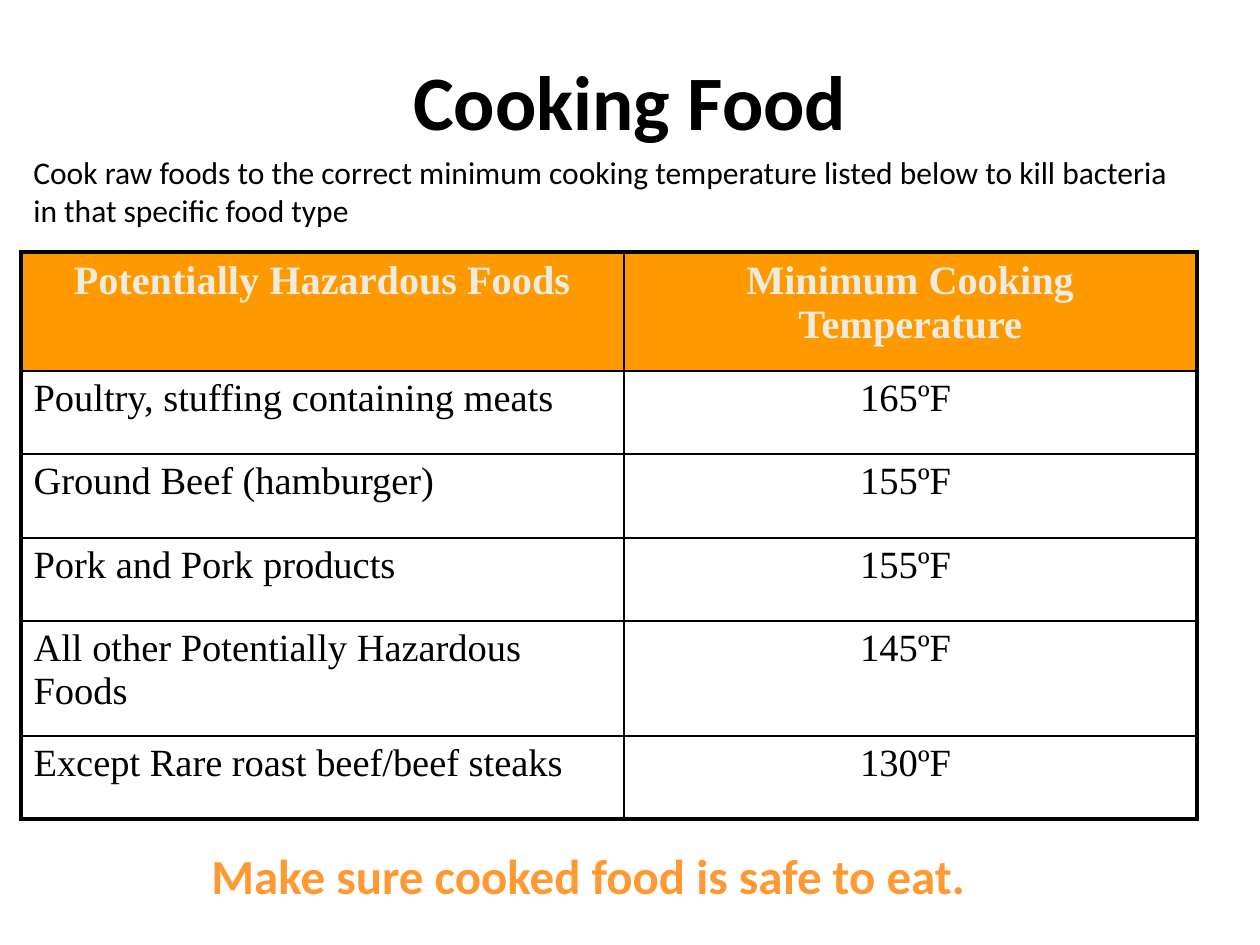
from lxml.etree import SubElement
from pptx import Presentation
from pptx.dml.color import RGBColor
from pptx.enum.text import MSO_ANCHOR, MSO_AUTO_SIZE, PP_ALIGN
from pptx.oxml.ns import qn
from pptx.util import Pt

EMU_PER_PX = 914400 / 126


def px(*lengths):
    return [round(length * EMU_PER_PX) for length in lengths]


def write(frame, wording, color, align, font_format):
    frame.word_wrap = True
    paragraph = frame.paragraphs[0]
    paragraph.alignment = align
    run = paragraph.add_run()
    run.text = wording
    run.font.color.rgb = RGBColor.from_string(color)
    for attribute, value in font_format.items():
        setattr(run.font, attribute, value)


deck = Presentation()
deck.slide_width, deck.slide_height = px(1260, 945)
slide = deck.slides.add_slide(deck.slide_layouts[5])

heading = slide.shapes.title
heading.left, heading.top, heading.width, heading.height = px(63, 21, 1134, 158)
heading.text_frame.vertical_anchor = MSO_ANCHOR.MIDDLE
write(heading.text_frame, "Cooking Food", "000000", PP_ALIGN.CENTER,
      {"name": "Calibri", "size": Pt(44), "bold": True})

captions = [
    ("Cook raw foods to the correct minimum cooking temperature listed below "
     "to kill bacteria in that specific food type",
     (21, 147, 1176, 89), "000000", {"name": "Calibri", "size": Pt(18), "bold": False}),
    ("Make sure cooked food is safe to eat.",
     (199, 839, 903, 72), "FF9933", {"name": "Calibri", "size": Pt(28), "bold": True}),
]
for wording, place, color, font_format in captions:
    caption = slide.shapes.add_textbox(*px(*place)).text_frame
    caption.auto_size = MSO_AUTO_SIZE.SHAPE_TO_FIT_TEXT
    write(caption, wording, color, PP_ALIGN.LEFT, font_format)

temperatures = [
    ("Potentially Hazardous Foods", "Minimum Cooking Temperature"),
    ("Poultry, stuffing containing meats", "165ºF "),
    ("Ground Beef (hamburger)", "155ºF "),
    ("Pork and Pork products", "155ºF "),
    ("All other Potentially Hazardous Foods", "145ºF "),
    ("Except Rare roast beef/beef steaks", "130ºF "),
]
column_widths = px(603, 573)
row_heights = px(119, 83, 84, 83, 115, 83)
last_row = len(row_heights) - 1
header_format = {"name": "Times New Roman", "size": Pt(23), "bold": True}
body_format = {"name": "Times New Roman", "size": Pt(22), "bold": False}

chart_of_foods = slide.shapes.add_table(
    len(row_heights), len(column_widths), *px(21, 252, 1176, 567)).table
for attribute, value in {"first_row": False, "horz_banding": False}.items():
    setattr(chart_of_foods, attribute, value)
for column, width in zip(chart_of_foods.columns, column_widths):
    column.width = width
for row, height in zip(chart_of_foods.rows, row_heights):
    row.height = height

for r, entries in enumerate(temperatures):
    for c, wording in enumerate(entries):
        cell = chart_of_foods.cell(r, c)
        is_header = r == 0
        write(cell.text_frame, wording,
              "EEECE1" if is_header else "000000",
              PP_ALIGN.CENTER if is_header or c == 1 else PP_ALIGN.LEFT,
              header_format if is_header else body_format)

        outer_edges = {"a:lnL": c == 0, "a:lnR": c == 1,
                       "a:lnT": is_header, "a:lnB": r == last_row}
        properties = cell._tc.get_or_add_tcPr()
        for edge, is_outer in outer_edges.items():
            border = SubElement(properties, qn(edge), w=str(Pt(2.25 if is_outer else 1)))
            ink = SubElement(border, qn("a:solidFill"))
            SubElement(ink, qn("a:srgbClr"), val="000000")

        if is_header:
            cell.fill.solid()
            cell.fill.fore_color.rgb = RGBColor.from_string("FF9900")
        else:
            cell.fill.background()

deck.save("out.pptx")
